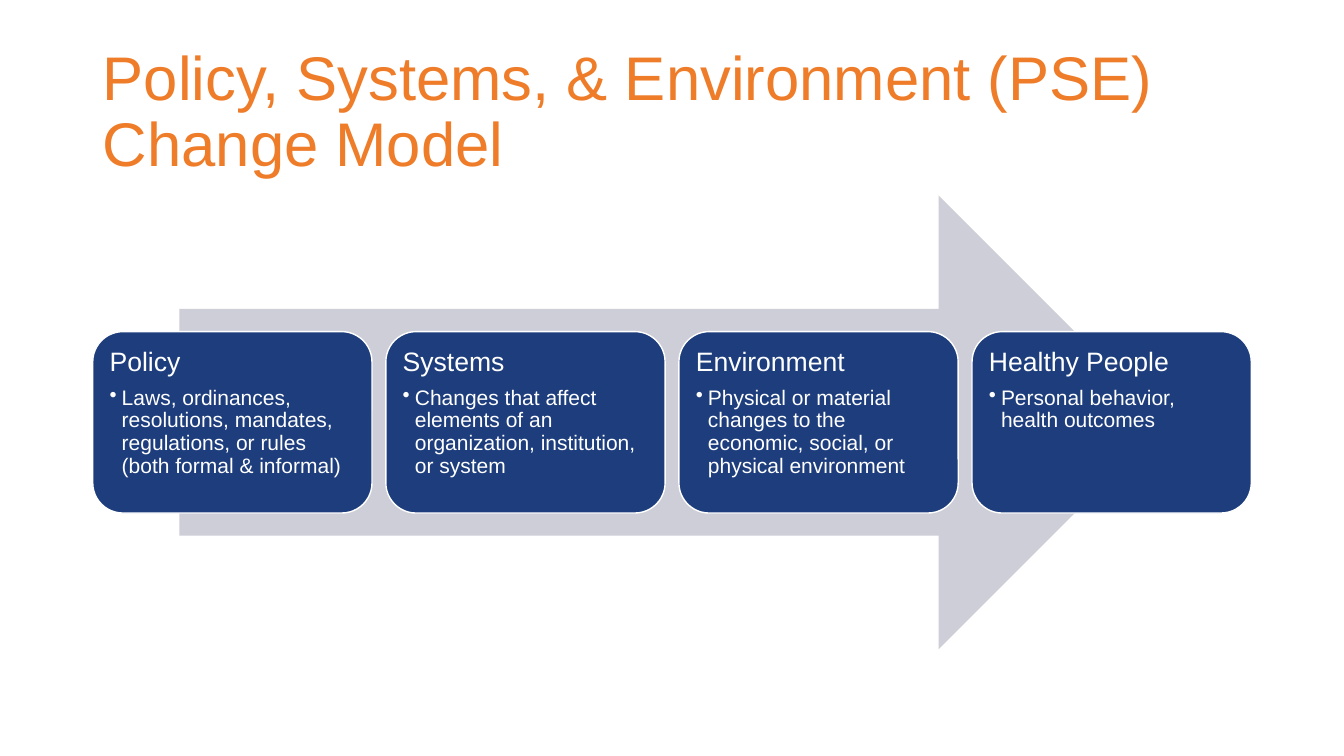
"""Build the Policy, Systems, & Environment (PSE) Change Model slide."""
from lxml import etree
from pptx import Presentation
from pptx.dml.color import RGBColor
from pptx.enum import shapes, text
from pptx.oxml import ns
from pptx.util import Inches, Pt


def paint(target, color):
    target.solid()
    target.fore_color.rgb = RGBColor.from_string(color)


def style(para, size, color):
    para.alignment = text.PP_ALIGN.LEFT
    para.line_spacing = 0.9
    para.font.name = "Arial"
    para.font.size = Pt(size)
    paint(para.font.fill, color)


STAGES = [
    ("Policy", "Laws, ordinances, resolutions, mandates, regulations, or rules "
               "(both formal & informal)"),
    ("Systems", "Changes that affect elements of an organization, institution, or system"),
    ("Environment", "Physical or material changes to the economic, social, or "
                    "physical environment"),
    ("Healthy People", "Personal behavior, health outcomes"),
]
LEFT, PITCH = 0.92, 2.907

deck = Presentation()
deck.slide_width, deck.slide_height = Inches(13.33), Inches(7.5)
page = deck.slides.add_slide(deck.slide_layouts[5])

title = page.shapes.title
title.left, title.top = Inches(LEFT), Inches(0.4)
title.width, title.height = Inches(11.5), Inches(1.45)
title.text_frame.text = "Policy, Systems, & Environment (PSE) Change Model"
title.text_frame.auto_size = text.MSO_AUTO_SIZE.NONE
title.text_frame.vertical_anchor = text.MSO_ANCHOR.MIDDLE
style(title.text_frame.paragraphs[0], 44, "EE7C29")

arrow = page.shapes.add_shape(shapes.MSO_SHAPE.RIGHT_ARROW, Inches(1.78), Inches(1.94),
                              Inches(9.78), Inches(4.5))
arrow.shadow.inherit = False
paint(arrow.fill, "CDCED7")
arrow.line.fill.background()

for index, (heading, detail) in enumerate(STAGES):
    card = page.shapes.add_shape(shapes.MSO_SHAPE.ROUNDED_RECTANGLE,
                                 Inches(LEFT + index * PITCH), Inches(3.29),
                                 Inches(2.77), Inches(1.8))
    card.shadow.inherit = False
    paint(card.fill, "1D3D7C")
    paint(card.line.fill, "FFFFFF")
    card.line.width = Pt(1)

    frame = card.text_frame
    frame.word_wrap = True
    frame.vertical_anchor = text.MSO_ANCHOR.TOP
    frame.margin_left = frame.margin_right = Inches(0.08)
    frame.margin_top = frame.margin_bottom = Inches(0.08)

    label = frame.paragraphs[0]
    label.text = heading
    label.space_after = Pt(7)
    style(label, 19, "FFFFFF")

    bullet = frame.add_paragraph()
    bullet.text = detail
    bullet.level = 1
    bullet.line_spacing = 0.9
    properties = bullet._p.get_or_add_pPr()
    properties.set("marL", str(Inches(0.12)))
    properties.set("indent", str(Inches(-0.12)))
    etree.SubElement(properties, ns.qn("a:buChar")).set("char", "•")
    style(bullet, 15, "FFFFFF")

deck.save("out.pptx")
